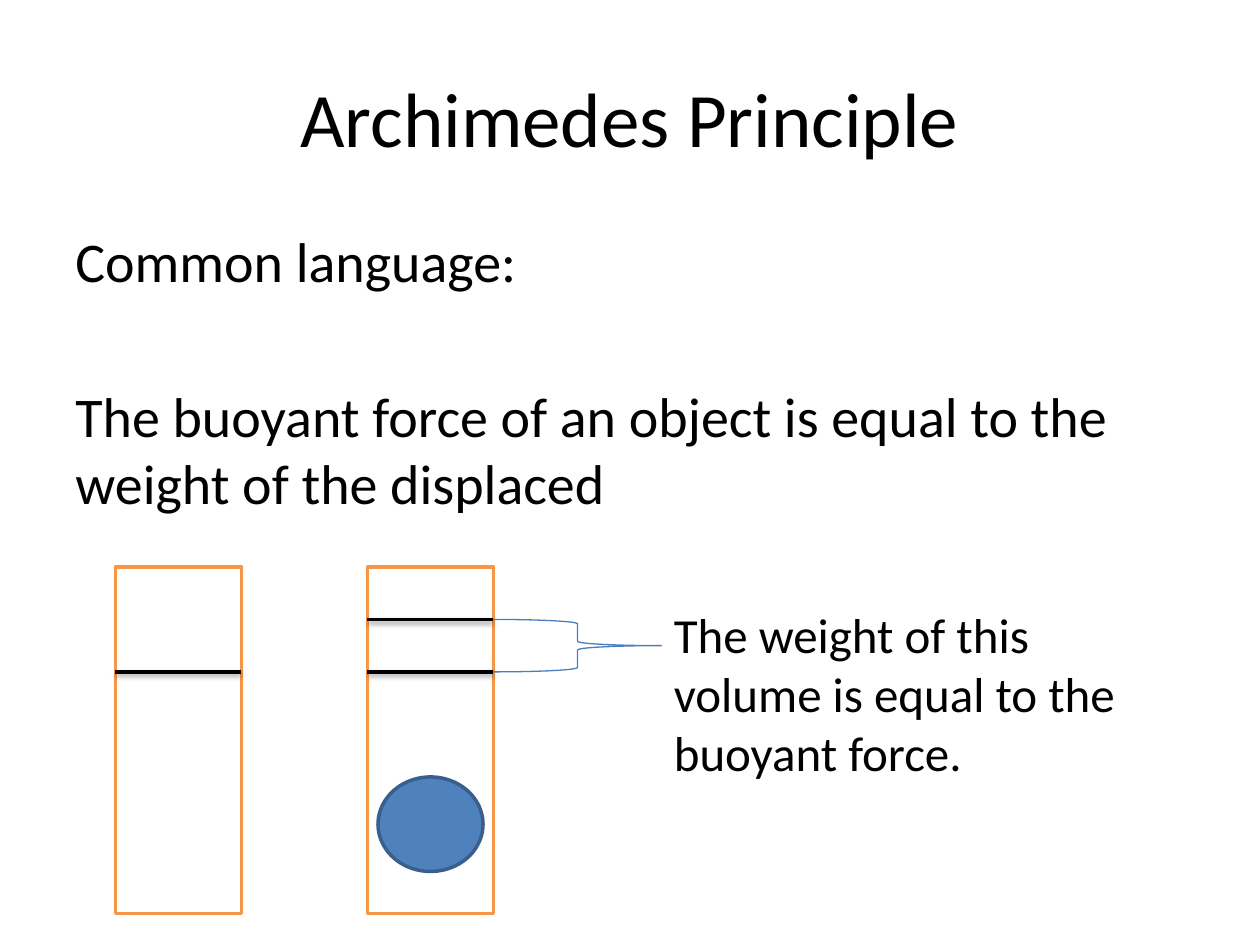
from lxml.etree import SubElement
from pptx import Presentation
from pptx.dml.color import RGBColor
from pptx.enum.shapes import MSO_CONNECTOR, MSO_SHAPE
from pptx.enum.text import MSO_ANCHOR, MSO_AUTO_SIZE, PP_ALIGN
from pptx.oxml.ns import qn
from pptx.util import Emu, Pt

BLACK = RGBColor(0x00, 0x00, 0x00)
WHITE = RGBColor(0xFF, 0xFF, 0xFF)
ORANGE = RGBColor(0xF7, 0x96, 0x46)
BLUE = RGBColor(0x4F, 0x81, 0xBD)
DARK_BLUE = RGBColor(0x3A, 0x5F, 0x8C)
BRACE_BLUE = RGBColor(0x4B, 0x7E, 0xBC)

EMU_PER_PX = 9525
PAGE_WIDTH, PAGE_HEIGHT = 960, 720
MARGIN = 48
TANK_TOP, TANK_WIDTH, TANK_HEIGHT = 432, 96, 264
FIRST_TANK, SECOND_TANK = 88, 280
OLD_LEVEL, NEW_LEVEL = 512, 472
BRACE_WIDTH = 128


def px(length):
    return Emu(length * EMU_PER_PX)


class Page:
    font = "Calibri"

    def __init__(self, slide):
        self.slide = slide

    def text(self, left, top, width, height, paragraphs, size, gap=0,
             align=PP_ALIGN.LEFT, **frame_format):
        box = self.slide.shapes.add_textbox(*map(px, (left, top, width, height)))
        frame = box.text_frame
        for name, value in {"word_wrap": True, **frame_format}.items():
            setattr(frame, name, value)
        for index, content in enumerate(paragraphs):
            para = frame.add_paragraph() if index else frame.paragraphs[0]
            para.alignment = align
            if index:
                para.space_before = Pt(gap)
            span = para.add_run()
            span.text = content
            for name, value in {"name": self.font, "size": Pt(size)}.items():
                setattr(span.font, name, value)
            span.font.color.rgb = BLACK

    def shape(self, kind, left, top, width, height, line, weight=2, fill=None):
        shape = self.slide.shapes.add_shape(kind, *map(px, (left, top, width, height)))
        shape.shadow.inherit = False
        if fill is None:
            shape.fill.background()
        else:
            shape.fill.solid()
            shape.fill.fore_color.rgb = fill
        shape.line.color.rgb = line
        shape.line.width = Pt(weight)

    def tank(self, left):
        self.shape(MSO_SHAPE.RECTANGLE, left, TANK_TOP, TANK_WIDTH, TANK_HEIGHT,
                   ORANGE, fill=WHITE)

    def water_level(self, left, top):
        level = self.slide.shapes.add_connector(
            MSO_CONNECTOR.STRAIGHT, *map(px, (left, top, left + TANK_WIDTH, top)))
        level.line.color.rgb = BLACK
        level.line.width = Pt(2)
        effects = SubElement(level._element.spPr, qn("a:effectLst"))
        shadow = SubElement(effects, qn("a:outerShdw"), blurRad=str(Pt(3.1)),
                            dist=str(Pt(1.6)), dir="5400000", rotWithShape="0")
        color = SubElement(shadow, qn("a:srgbClr"), val=str(BLACK))
        SubElement(color, qn("a:alpha"), val="38000")


def main():
    deck = Presentation()
    deck.slide_width, deck.slide_height = px(PAGE_WIDTH), px(PAGE_HEIGHT)
    page = Page(deck.slides.add_slide(deck.slide_layouts[6]))
    content_width = PAGE_WIDTH - 2 * MARGIN

    page.text(MARGIN, 29, content_width, 120, ["Archimedes Principle"], 44,
              align=PP_ALIGN.CENTER, vertical_anchor=MSO_ANCHOR.MIDDLE)
    page.text(MARGIN, 168, content_width, 475, [
        "Common language:",
        "The buoyant force of an object is equal to the weight of the displaced",
    ], 32, gap=50)

    for left in (FIRST_TANK, SECOND_TANK):
        page.tank(left)
    for left in (FIRST_TANK, SECOND_TANK):
        page.water_level(left, OLD_LEVEL)
    page.shape(MSO_SHAPE.OVAL, SECOND_TANK + 8, 592, TANK_WIDTH - 16, 72,
               DARK_BLUE, fill=BLUE)
    page.water_level(SECOND_TANK, NEW_LEVEL)

    brace_left = SECOND_TANK + TANK_WIDTH
    page.shape(MSO_SHAPE.RIGHT_BRACE, brace_left, NEW_LEVEL, BRACE_WIDTH,
               OLD_LEVEL - NEW_LEVEL, BRACE_BLUE, weight=0.75)
    page.text(brace_left + BRACE_WIDTH, 456, 392, 145,
              ["The weight of this volume is equal to the buoyant force."], 28,
              auto_size=MSO_AUTO_SIZE.SHAPE_TO_FIT_TEXT)

    deck.save("out.pptx")


if __name__ == "__main__":
    main()
